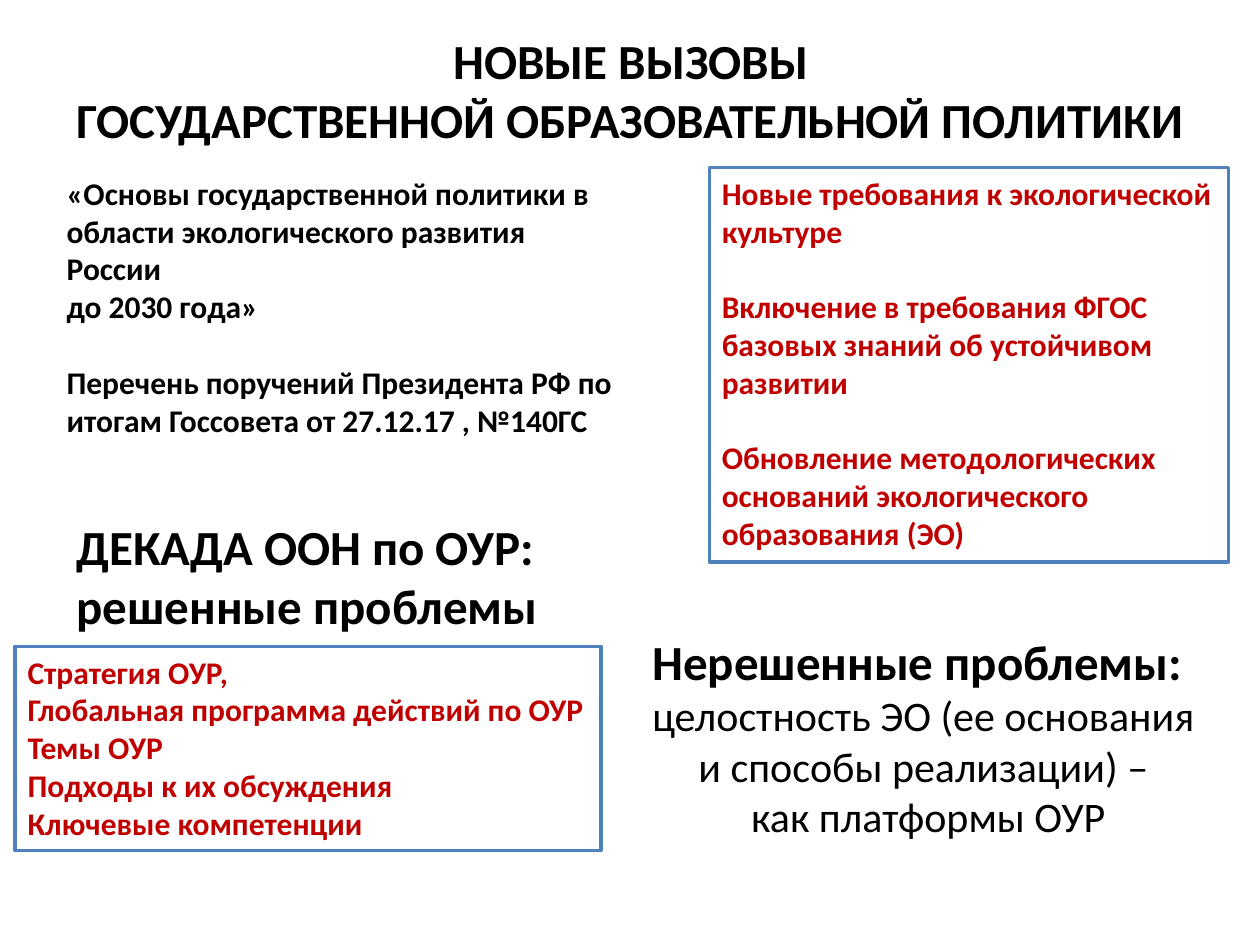
from pptx import Presentation
from pptx.dml.color import RGBColor
from pptx.enum.shapes import MSO_SHAPE
from pptx.enum.text import MSO_ANCHOR, MSO_AUTO_SIZE, PP_ALIGN
from pptx.util import Inches, Pt

LEFT, CENTER = PP_ALIGN.LEFT, PP_ALIGN.CENTER


def color(hex_string):
    return RGBColor.from_string(hex_string)


class SlideBuilder:
    FONT = "Calibri"
    BLACK, RED, BLUE, WHITE = "000000", "C00000", "4F81BD", "FFFFFF"
    HEADING, BODY, LARGE = 28, 18, 24
    GAP = 21.6  # one body line

    def __init__(self, prs):
        self.s = prs.slides.add_slide(prs.slide_layouts[5])

    def paragraph(self, tf, text, size, hex_string=BLACK, bold=True, align=LEFT, gap=0):
        p = tf.paragraphs[0]
        if p.runs:
            p = tf.add_paragraph()
        p.add_run().text = text
        p.alignment = align
        p.space_before = Pt(gap)
        p.font.name = self.FONT
        p.font.size = Pt(size)
        p.font.bold = bold
        p.font.color.rgb = color(hex_string)

    def groups(self, tf, groups, hex_string):
        """Write groups of body lines with one line of space between groups."""
        for i, lines in enumerate(groups):
            for j, line in enumerate(lines):
                gap = self.GAP if i and not j else 0
                self.paragraph(tf, line, self.BODY, hex_string, gap=gap)

    def fill(self, sp):
        sp.fill.solid()
        sp.fill.fore_color.rgb = color(self.WHITE)

    def title(self, lines, left, top, width, height):
        sp = self.s.shapes.title
        sp.left, sp.top, sp.width, sp.height = map(Inches, (left, top, width, height))
        self.fill(sp)
        tf = sp.text_frame
        tf.auto_size = MSO_AUTO_SIZE.SHAPE_TO_FIT_TEXT
        tf.word_wrap = False
        tf.vertical_anchor = MSO_ANCHOR.TOP
        for line, align in lines:
            self.paragraph(tf, line, self.HEADING, align=align)

    def text(self, left, top, width, height, wrap=False, filled=False):
        sp = self.s.shapes.add_textbox(*map(Inches, (left, top, width, height)))
        if filled:
            self.fill(sp)
        tf = sp.text_frame
        tf.word_wrap = wrap
        tf.auto_size = MSO_AUTO_SIZE.SHAPE_TO_FIT_TEXT
        return tf

    def frame(self, groups, left, top, width, height):
        sp = self.s.shapes.add_shape(
            MSO_SHAPE.RECTANGLE, *map(Inches, (left, top, width, height)))
        sp.shadow.inherit = False
        self.fill(sp)
        sp.line.color.rgb = color(self.BLUE)
        sp.line.width = Pt(2)
        tf = sp.text_frame
        tf.word_wrap = True
        tf.vertical_anchor = MSO_ANCHOR.TOP
        self.groups(tf, groups, self.RED)


def main():
    prs = Presentation()
    prs.slide_width, prs.slide_height = Inches(10), Inches(7.5)
    b = SlideBuilder(prs)

    b.title([("НОВЫЕ ВЫЗОВЫ ", CENTER),
             ("ГОСУДАРСТВЕННОЙ ОБРАЗОВАТЕЛЬНОЙ ПОЛИТИКИ ", LEFT)],
            0.51, 0.19, 9.08, 1.04)

    policy = b.text(0.43, 1.33, 4.62, 1.92, wrap=True)
    b.groups(policy, [
        ["«Основы государственной политики в области экологического развития России",
         "до 2030 года»"],
        ["Перечень поручений Президента РФ по",
         "итогам Госсовета от 27.12.17 , №140ГС"],
    ], b.BLACK)

    b.frame([
        ["Новые требования к экологической", "культуре"],
        ["Включение в требования ФГОС", "базовых знаний об устойчивом", "развитии"],
        ["Обновление методологических", "оснований экологического",
         "образования (ЭО)"],
    ], 5.63, 1.33, 4.12, 3.13)

    decade = b.text(0.51, 4.05, 3.99, 1.04, filled=True)
    for line in ("ДЕКАДА ООН по ОУР:", "решенные проблемы"):
        b.paragraph(decade, line, b.HEADING)

    b.frame([
        ["Стратегия ОУР,", "Глобальная программа действий по ОУР", "Темы ОУР",
         "Подходы к их обсуждения", "Ключевые компетенции"],
    ], 0.12, 5.13, 4.65, 1.62)

    unsolved = b.text(5.08, 4.96, 4.8, 1.78)
    b.paragraph(unsolved, "Нерешенные проблемы:", b.HEADING)
    for line, align in (("целостность ЭО (ее основания ", LEFT),
                        ("и способы реализации) – ", CENTER),
                        ("как платформы ОУР", CENTER)):
        b.paragraph(unsolved, line, b.LARGE, bold=False, align=align)

    prs.save("out.pptx")


if __name__ == "__main__":
    main()
